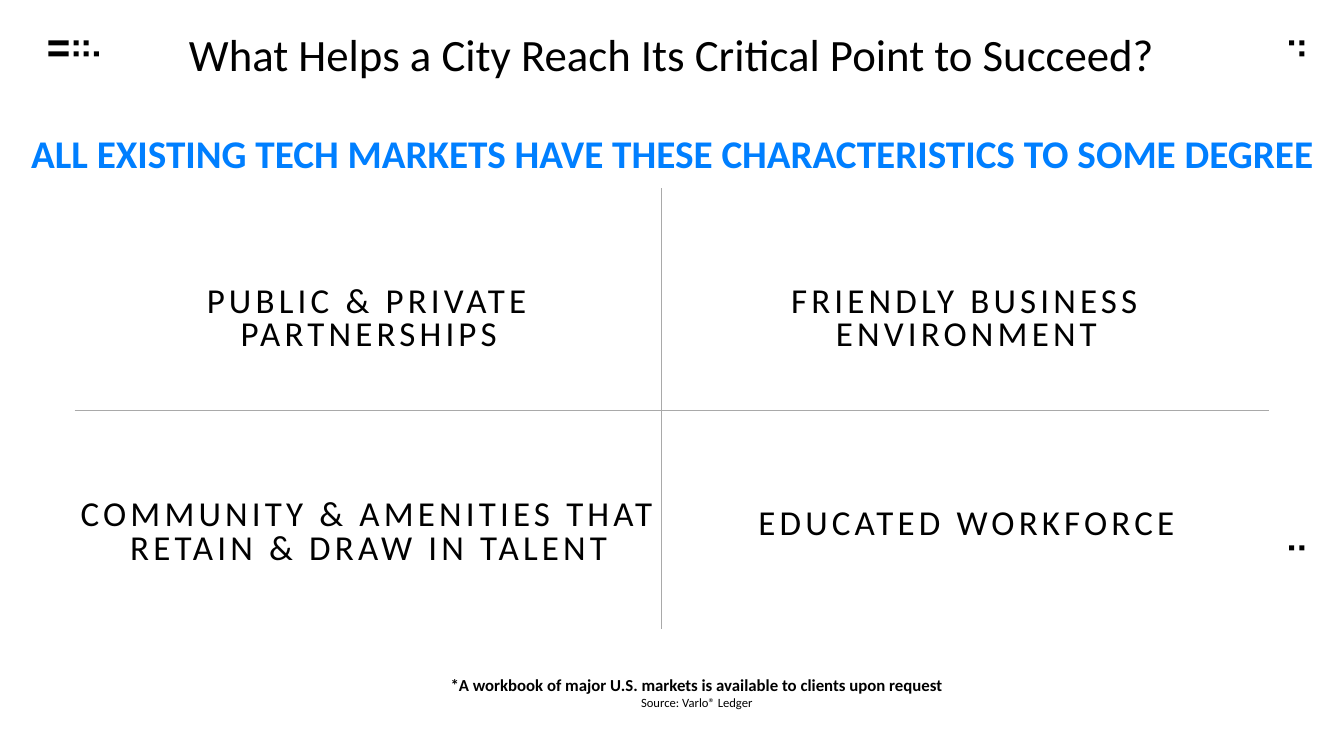
import pptx
import pptx.util
import pptx.dml.color
import pptx.enum.shapes
import pptx.enum.text
from lxml import etree

Pt = pptx.util.Pt
WIDTH, HEIGHT = 960, 540
BLACK, BLUE, GRAY = "000000", "007FFF", "A9A9A9"
DOT = 3.6


def rgb(hex_color):
    return pptx.dml.color.RGBColor.from_string(hex_color)


def add_text(s, box, lines, inset=(0, 0), line_spacing=None, tracking=0):
    """Place centred lines, each a (text, format) pair; inset is (side, top)."""
    tf = s.shapes.add_textbox(*map(Pt, box)).text_frame
    tf.word_wrap = True
    tf.vertical_anchor = pptx.enum.text.MSO_ANCHOR.TOP
    tf.margin_left = tf.margin_right = Pt(inset[0])
    tf.margin_top = tf.margin_bottom = Pt(inset[1])
    for i, (text, fmt) in enumerate(lines):
        p = tf.add_paragraph() if i else tf.paragraphs[0]
        p.alignment = pptx.enum.text.PP_ALIGN.CENTER
        if line_spacing:
            p.line_spacing = line_spacing
        r = p.add_run()
        r.text = text
        font = {"name": "Calibri", "size": Pt(fmt["size"]), "bold": fmt.get("bold", False)}
        for name, value in font.items():
            setattr(r.font, name, value)
        r.font.color.rgb = rgb(fmt.get("color", BLACK))
        if tracking:
            r.font._element.set("spc", str(tracking * 100))


def add_rule(s, x1, y1, x2, y2):
    line = s.shapes.add_connector(
        pptx.enum.shapes.MSO_CONNECTOR.STRAIGHT, *map(Pt, (x1, y1, x2, y2)))
    line.line.color.rgb = rgb(GRAY)
    line.line.width = Pt(0.5)
    etree.SubElement(line._element.spPr, pptx.oxml.ns.qn("a:effectLst"))


def add_marks(s, x, y, rows):
    """Draw rows of black bars, each an (offset, width) pair."""
    for i, row in enumerate(rows):
        for offset, width in row:
            sp = s.shapes.add_shape(
                pptx.enum.shapes.MSO_SHAPE.RECTANGLE,
                Pt(x + offset), Pt(y + i * 7.9), Pt(width), Pt(DOT))
            sp.shadow.inherit = False
            sp.fill.solid()
            sp.fill.fore_color.rgb = rgb(BLACK)
            sp.line.fill.background()


def add_decoration(s):
    bar, *dots = (0, 14.4), (18, DOT), (25.2, DOT), (32.4, DOT)
    pair = [(0, DOT), (7.2, DOT)]
    add_marks(s, 34.6, 28.8, [[bar, *dots[:2]], [bar, *dots]])
    add_marks(s, 920.9, 28.8, [pair, pair[1:]])
    add_marks(s, 920.9, 389.5, [pair])


def add_heading(s, x, y, w):
    add_text(s, (x, y, w, 39),
             [("What Helps a City Reach Its Critical Point to Succeed?", {"size": 32})])
    add_text(s, (x, y + 69.2, w, 41),
             [("ALL EXISTING TECH MARKETS HAVE THESE CHARACTERISTICS TO SOME DEGREE",
               {"size": 28, "bold": True, "color": BLUE})], inset=(7.2, 3.6))


def add_quadrants(s, x, y, w, h):
    mid_x, mid_y = x + 419, y + 158.4
    left, right = (x + 2.2, 416), (mid_x + 2.1, 432)
    quadrants = [
        ("PUBLIC & PRIVATE PARTNERSHIPS", left, y + 69.8, 49),
        ("FRIENDLY BUSINESS ENVIRONMENT", right, y + 69.8, 49),
        ("COMMUNITY & AMENITIES THAT RETAIN & DRAW IN TALENT", left, mid_y + 64.1, 49),
        ("EDUCATED WORKFORCE", right, mid_y + 70.6, 25),
    ]
    for text, (col_x, col_w), top, height in quadrants:
        add_text(s, (col_x, top, col_w, height), [(text, {"size": 25})],
                 line_spacing=0.8, tracking=3)
    add_rule(s, mid_x, y, mid_x, y + h)
    add_rule(s, x, mid_y, x + w, mid_y)


def add_footnote(s, x, y, w, h):
    add_text(s, (x, y, w, h), [
        ("*A workbook of major U.S. markets is available to clients upon request",
         {"size": 12, "bold": True}),
        ("Source: Varlo® Ledger", {"size": 9}),
    ], inset=(7.2, 3.6))


def main():
    prs = pptx.Presentation()
    prs.slide_width, prs.slide_height = Pt(WIDTH), Pt(HEIGHT)
    s = prs.slides.add_slide(prs.slide_layouts[6])
    add_decoration(s)
    add_quadrants(s, 53.3, 134.6, 853.2, 314.7)
    add_heading(s, 0, 19.4, WIDTH)
    add_footnote(s, 155, 478.4, 685.4, 32.4)
    prs.save("out.pptx")


if __name__ == "__main__":
    main()
